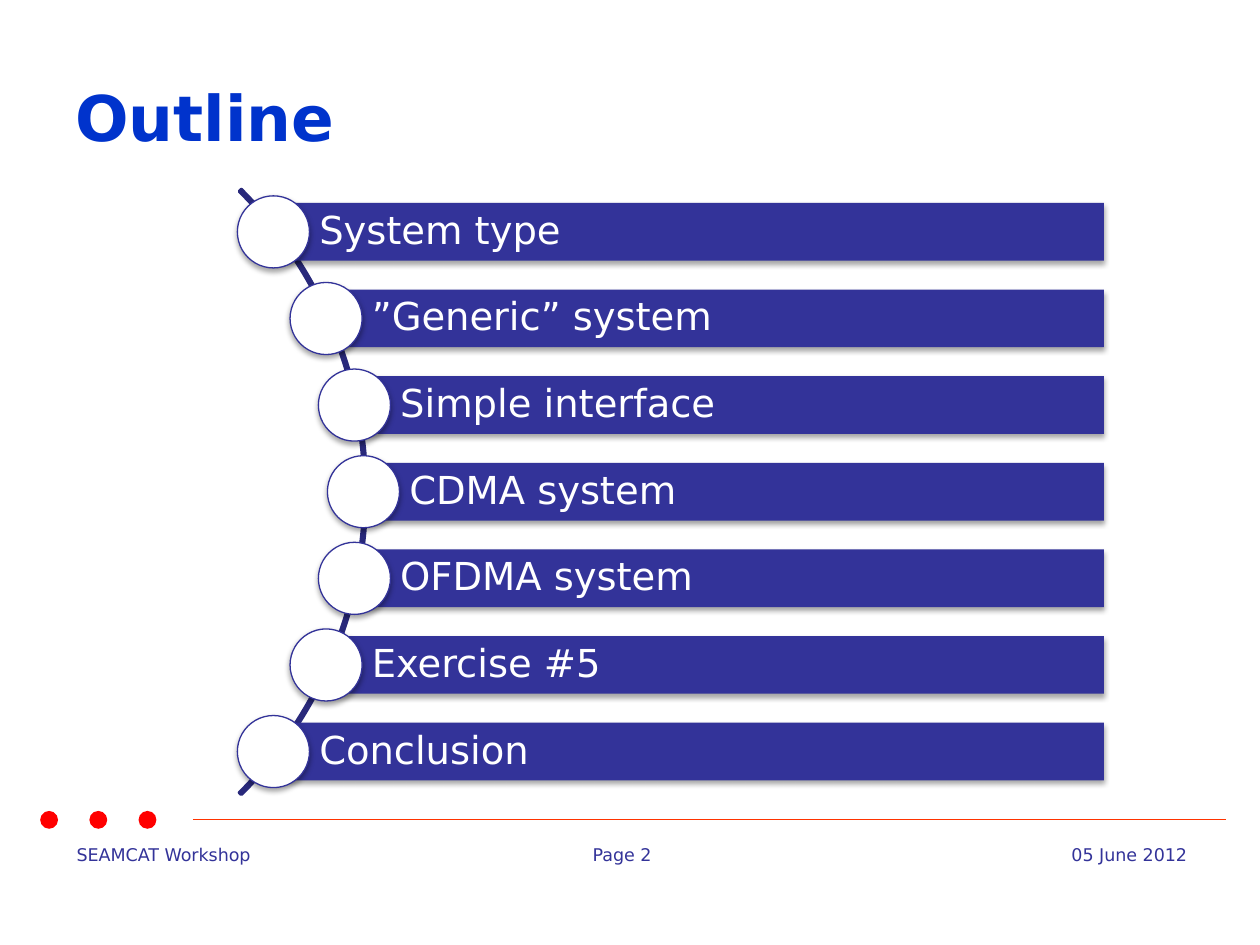
from dataclasses import dataclass
from math import sqrt

from lxml import etree
from pptx import Presentation
from pptx import util as u
from pptx.dml.color import RGBColor
from pptx.enum import shapes, text
from pptx.oxml import parse_xml
from pptx.oxml.ns import nsdecls, qn


@dataclass(frozen=True)
class Theme:
    font: str = "DejaVu Sans"
    title_size: float = 36
    item_size: float = 22
    footer_size: float = 10
    title: str = "0033CC"
    main: str = "333399"
    arc: str = "29297B"
    rule: str = "FF3300"
    dot: str = "FF0000"
    white: str = "FFFFFF"


SHADOW = (
    f'<a:effectLst {nsdecls("a")}>'
    f'<a:outerShdw blurRad="{u.Pt(3.1)}" dist="{u.Pt(1.8)}" dir="5400000" rotWithShape="0">'
    '<a:srgbClr val="000000"><a:alpha val="35000"/></a:srgbClr>'
    '</a:outerShdw></a:effectLst>'
)


def points(*values):
    return [u.Pt(value) for value in values]


def write(shape, content, *, font, size, color, bold=False,
          align=text.PP_ALIGN.LEFT, anchor=text.MSO_ANCHOR.TOP,
          insets=(7.2, 3.6, 7.2, 3.6), spacing=None, wrap=True):
    frame = shape.text_frame
    frame.word_wrap = wrap
    frame.vertical_anchor = anchor
    (frame.margin_left, frame.margin_top,
     frame.margin_right, frame.margin_bottom) = points(*insets)
    paragraph = frame.paragraphs[0]
    paragraph.alignment = align
    if spacing:
        paragraph.line_spacing = spacing
    run = paragraph.add_run()
    run.text = content
    run.font.name = font
    run.font.size = u.Pt(size)
    run.font.bold = bold
    run.font.color.rgb = RGBColor.from_string(color)


class SlideBuilder:
    def __init__(self, slide, theme):
        self.slide = slide
        self.theme = theme

    def text_box(self, box, content, **style):
        shape = self.slide.shapes.add_textbox(*points(*box))
        write(shape, content, font=self.theme.font, **style)

    def shape(self, kind, box, fill, line=None, width=0.75, shadow=False):
        shape = self.slide.shapes.add_shape(kind, *points(*box))
        shape.fill.solid()
        shape.fill.fore_color.rgb = RGBColor.from_string(fill)
        if line:
            shape.line.color.rgb = RGBColor.from_string(line)
            shape.line.width = u.Pt(width)
        else:
            shape.line.fill.background()
        shape.shadow.inherit = False
        if shadow:
            properties = shape._element.spPr
            properties.replace(properties.find(qn("a:effectLst")), parse_xml(SHADOW))
        return shape

    def line(self, start, end, color, width):
        connector = self.slide.shapes.add_connector(
            shapes.MSO_CONNECTOR.STRAIGHT, *points(*start, *end))
        connector.line.color.rgb = RGBColor.from_string(color)
        connector.line.width = u.Pt(width)
        etree.SubElement(connector._element.spPr, qn("a:effectLst"))

    def arc(self, box):
        arc = self.shape(shapes.MSO_SHAPE.BLOCK_ARC, box,
                         self.theme.arc, self.theme.arc, 2)
        for index, value in enumerate((189, 27, 0.003)):
            arc.adjustments[index] = value

    def item(self, center_x, center_y, content):
        theme = self.theme
        right, height, diameter = 630.8, 33, 41.2
        bar = self.shape(shapes.MSO_SHAPE.RECTANGLE,
                         (center_x, center_y - height / 2, right - center_x, height),
                         theme.main, shadow=True)
        write(bar, content, font=theme.font, size=theme.item_size, color=theme.white,
              anchor=text.MSO_ANCHOR.MIDDLE, insets=(26.2, 4.2, 4.2, 4.2), spacing=0.9)
        self.shape(shapes.MSO_SHAPE.OVAL,
                   (center_x - diameter / 2, center_y - diameter / 2, diameter, diameter),
                   theme.white, theme.main, shadow=True)


def main():
    theme = Theme()
    presentation = Presentation()
    presentation.slide_width, presentation.slide_height = points(720, 540)
    slide = presentation.slides.add_slide(presentation.slide_layouts[6])
    builder = SlideBuilder(slide, theme)

    # Footer
    footer = dict(size=theme.footer_size, color=theme.main)
    builder.text_box((36.7, 478.8, 117.4, 19.4), "SEAMCAT Workshop", wrap=False, **footer)
    builder.text_box((331.6, 478.8, 59, 19.4), "Page 2", wrap=False, **footer)
    builder.line((110.2, 468.5), (700.6, 468.5), theme.rule, 0.75)
    builder.text_box((544.3, 478.8, 141.1, 19.4), "05 June 2012",
                     align=text.PP_ALIGN.RIGHT, **footer)
    for index in range(3):
        builder.shape(shapes.MSO_SHAPE.OVAL, (23 + 28.1 * index, 463.4, 10.2, 10.2), theme.dot)

    # Title
    builder.text_box((36, 21.6, 648, 90), "Outline", size=theme.title_size,
                     color=theme.title, bold=True, anchor=text.MSO_ANCHOR.MIDDLE)

    # Outline items along the arc
    builder.arc((-279.4, 36.7, 488.9, 488.9))
    items = ("System type", "”Generic” system", "Simple interface", "CDMA system",
             "OFDMA system", "Exercise #5", "Conclusion")
    origin_x, origin_y, radius, pitch = -32.3, 281, 240, 49.5
    for index, content in enumerate(items):
        offset = (index - len(items) // 2) * pitch
        center_x = origin_x + sqrt(radius ** 2 - offset ** 2)
        builder.item(center_x, origin_y + offset, content)

    presentation.save("out.pptx")


if __name__ == "__main__":
    main()
